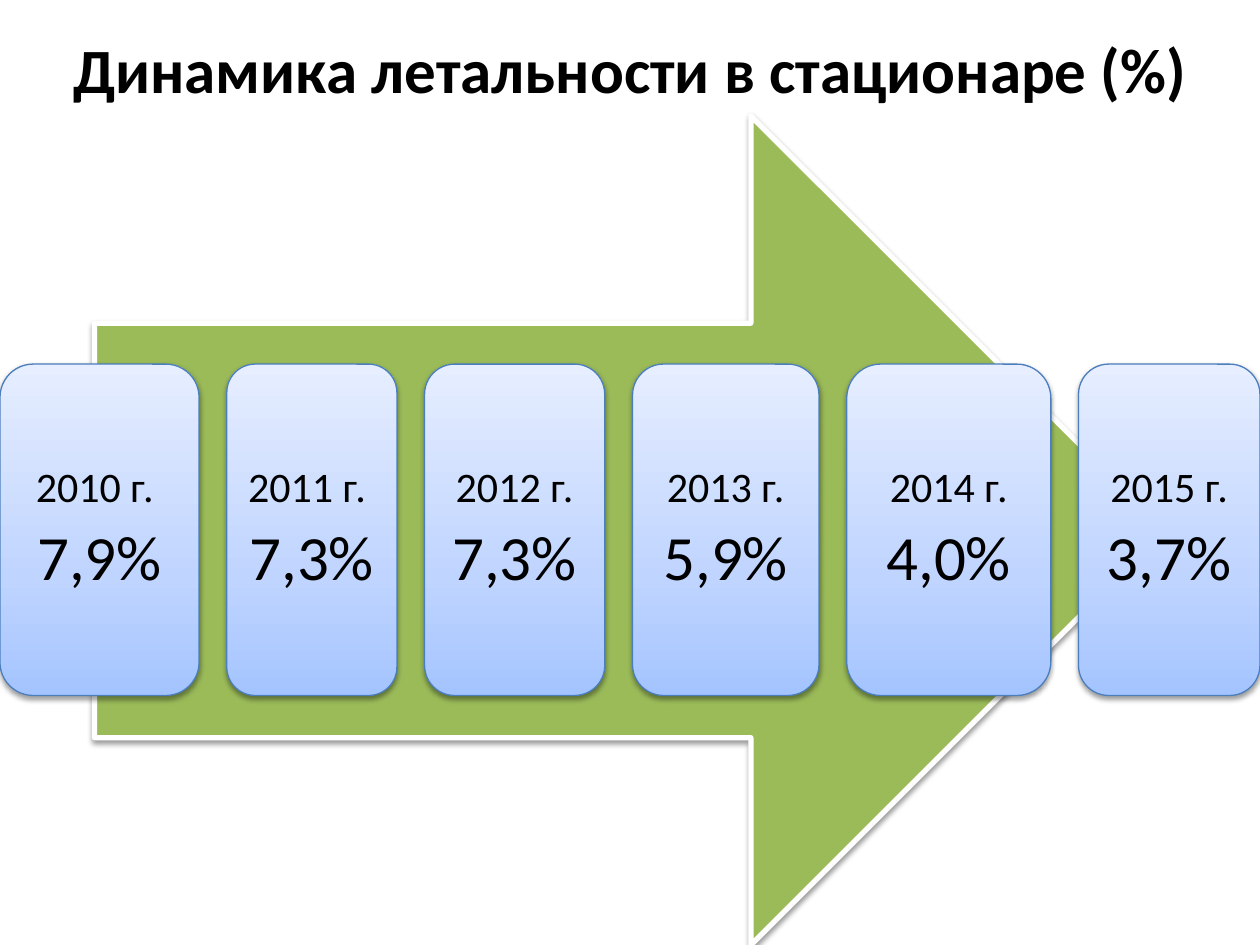
from copy import deepcopy

from lxml import etree
from pptx import Presentation
from pptx.dml.color import RGBColor
from pptx.enum import shapes, text
from pptx.oxml.ns import qn
from pptx.util import Inches, Pt

FONT = "Calibri"
CARD_TOP, CARD_HEIGHT, CARD_GAP = 2.89, 2.63, 0.22
CARD_STOPS = [(0, "A4C4FF"), (0.35, "BFD4FF"), (1, "E6EEFF")]
# Year, value, card width in inches
CARDS = [
    ("2010 г. ", "7,9%", 1.58),
    ("2011 г. ", "7,3%", 1.35),
    ("2012 г.", "7,3%", 1.43),
    ("2013 г.", "5,9%", 1.48),
    ("2014 г.", "4,0%", 1.62),
    ("2015 г.", "3,7%", 1.44),
]


def color(value):
    return RGBColor.from_string(value)


def write(para, words, size, bold=False, spacing=None, after=0):
    para.alignment = text.PP_ALIGN.CENTER
    para.line_spacing = spacing
    para.space_after = Pt(after)
    span = para.add_run()
    span.text = words
    span.font.name = FONT
    span.font.size = Pt(size)
    span.font.bold = bold
    span.font.color.rgb = color("000000")


def add_shadow(shape):
    """Give the shape a soft shadow that falls straight down."""
    shape.shadow.inherit = False
    effects = shape._element.spPr.find(qn("a:effectLst"))
    shadow = etree.SubElement(
        effects, qn("a:outerShdw"), blurRad=str(Pt(3.1)), dist=str(Pt(1.6)),
        dir="5400000", rotWithShape="0")
    black = etree.SubElement(shadow, qn("a:srgbClr"), val="000000")
    etree.SubElement(black, qn("a:alpha"), val="38000")


def fill_gradient(shape, stops, angle):
    shape.fill.gradient()
    shape.fill.gradient_angle = angle
    stop_list = shape._element.spPr.find(qn("a:gradFill")).find(qn("a:gsLst"))
    while len(stop_list) < len(stops):
        stop_list.append(deepcopy(stop_list[-1]))
    for stop, (position, value) in zip(shape.fill.gradient_stops, stops):
        stop.position = position
        stop.color.rgb = color(value)


def add_outlined(page, kind, left, top, width, height, line, weight):
    shape = page.shapes.add_shape(
        kind, Inches(left), Inches(top), Inches(width), Inches(height))
    shape.line.color.rgb = color(line)
    shape.line.width = Pt(weight)
    add_shadow(shape)
    return shape


def add_title(page, words):
    title = page.shapes.title
    title.left, title.top = Inches(0), Inches(0)
    title.width, title.height = Inches(10), Inches(1.08)
    title.text_frame.vertical_anchor = text.MSO_ANCHOR.MIDDLE
    write(title.text_frame.paragraphs[0], words, 36, bold=True)


def add_arrow(page):
    arrow = add_outlined(page, shapes.MSO_SHAPE.RIGHT_ARROW,
                         0.75, 0.92, 8.5, 6.58, "FFFFFF", 3)
    arrow.fill.solid()
    arrow.fill.fore_color.rgb = color("9BBB59")


def add_card(page, left, width, year, value):
    card = add_outlined(page, shapes.MSO_SHAPE.ROUNDED_RECTANGLE,
                        left, CARD_TOP, width, CARD_HEIGHT, "4B7EBC", 0.75)
    fill_gradient(card, CARD_STOPS, 90)
    frame = card.text_frame
    frame.word_wrap = True
    frame.vertical_anchor = text.MSO_ANCHOR.MIDDLE
    frame.margin_left = frame.margin_right = Inches(0.03)
    write(frame.paragraphs[0], year, 24, spacing=0.9, after=8.4)
    write(frame.add_paragraph(), value, 36, spacing=0.9)


def main():
    deck = Presentation()
    deck.slide_width, deck.slide_height = Inches(10), Inches(7.5)
    page = deck.slides.add_slide(deck.slide_layouts.get_by_name("Title Only"))
    add_title(page, "Динамика летальности в стационаре (%)")
    add_arrow(page)
    left = 0
    for year, value, width in CARDS:
        add_card(page, left, width, year, value)
        left += width + CARD_GAP
    deck.save("out.pptx")


if __name__ == "__main__":
    main()
